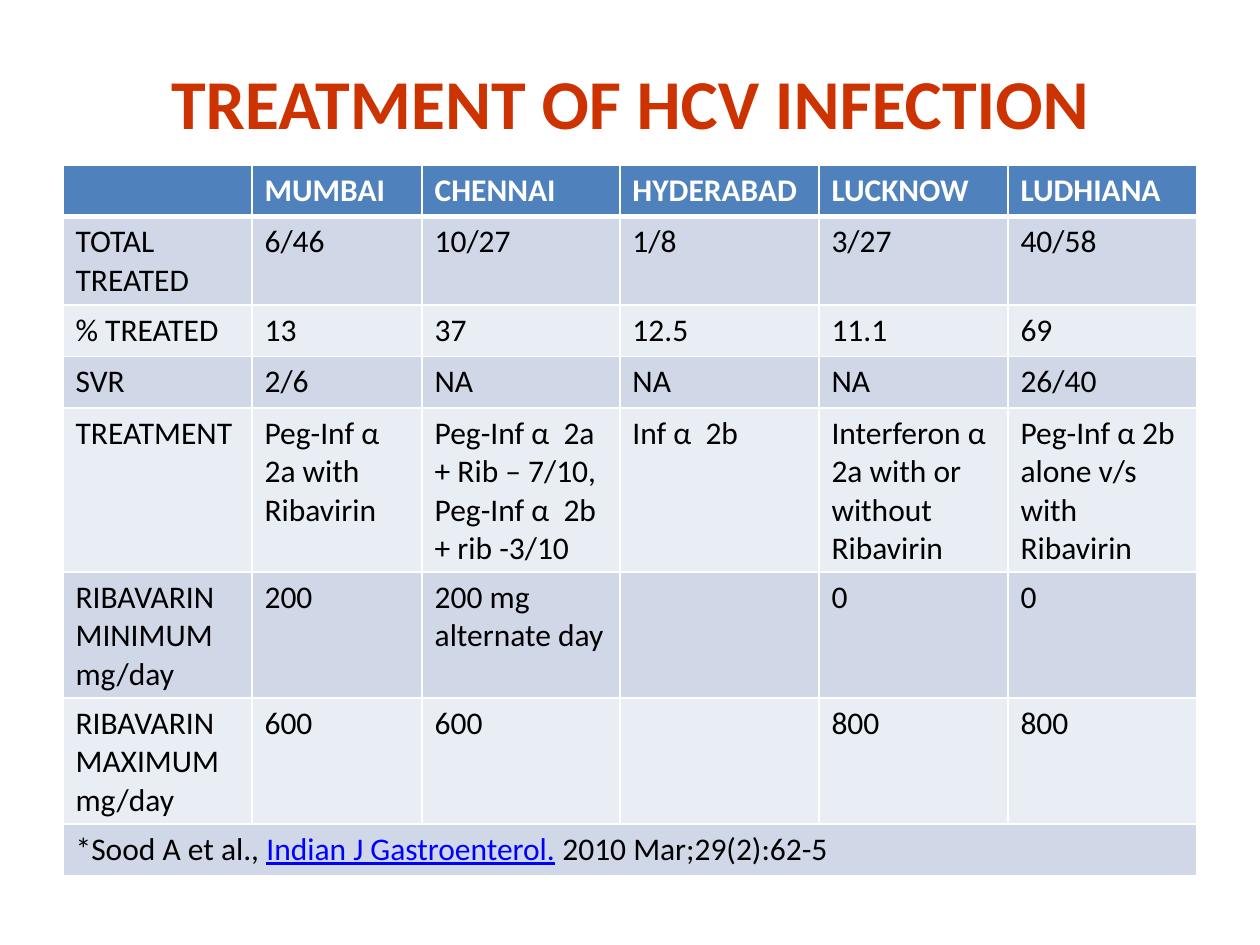
from lxml.etree import SubElement
from pptx import Presentation
from pptx.dml.color import RGBColor
from pptx.enum.text import MSO_ANCHOR, PP_ALIGN
from pptx.oxml.ns import qn
from pptx.util import Inches, Pt

WHITE = RGBColor(0xFF, 0xFF, 0xFF)
BLACK = RGBColor(0x00, 0x00, 0x00)
TITLE_RED = RGBColor(0xCC, 0x33, 0x00)
HEADER_BLUE = RGBColor(0x4F, 0x81, 0xBD)
BAND_DARK = RGBColor(0xD0, 0xD8, 0xE8)
BAND_LIGHT = RGBColor(0xE9, 0xED, 0xF4)
CITATION_BLUE = RGBColor(0x00, 0x00, 0xFF)

COLUMN_WIDTHS = [1.5, 1.35, 1.57, 1.58, 1.5, 1.5]
ROW_HEIGHT = 0.41
ROWS = [
    ["", "MUMBAI", "CHENNAI", "HYDERABAD", "LUCKNOW", "LUDHIANA"],
    ["TOTAL TREATED", "6/46", "10/27", "1/8", "3/27", "40/58"],
    ["% TREATED", "13", "37", "12.5", "11.1", "69"],
    ["SVR", "2/6", "NA", "NA", "NA", "26/40"],
    ["TREATMENT", "Peg-Inf α 2a with Ribavirin",
     "Peg-Inf α  2a + Rib – 7/10, Peg-Inf α  2b + rib -3/10", "Inf α  2b",
     "Interferon α 2a with or without Ribavirin",
     "Peg-Inf α 2b alone v/s with Ribavirin"],
    ["RIBAVARIN MINIMUM mg/day", "200", "200 mg alternate day", "", "0", "0"],
    ["RIBAVARIN MAXIMUM mg/day", "600", "600", "", "800", "800"],
    [""] * 6,
]
CITATION = ["*Sood A et al., ", "Indian J Gastroenterol.", "\u00a02010 Mar;29(2):62-5".replace("\u00a0", " ")]


class SlideBuilder:
    font_name = "Calibri"
    title_size = 40
    table_size = 18

    def __init__(self, slide):
        self.slide = slide

    def style_font(self, font, size, color, bold=False):
        font.name = self.font_name
        font.size = Pt(size)
        font.bold = bold
        font.color.rgb = color

    def add_title(self, text, left, top, width, height):
        box = self.slide.shapes.add_textbox(
            Inches(left), Inches(top), Inches(width), Inches(height))
        frame = box.text_frame
        frame.word_wrap = True
        frame.vertical_anchor = MSO_ANCHOR.MIDDLE
        paragraph = frame.paragraphs[0]
        paragraph.text = text
        paragraph.alignment = PP_ALIGN.CENTER
        self.style_font(paragraph.font, self.title_size, TITLE_RED, bold=True)

    def add_table(self, rows, column_widths, left, top, height):
        frame = self.slide.shapes.add_table(
            len(rows), len(column_widths), Inches(left), Inches(top),
            Inches(sum(column_widths)), Inches(height))
        table = frame.table
        for column, width in zip(table.columns, column_widths):
            column.width = Inches(width)
        for row_index, texts in enumerate(rows):
            table.rows[row_index].height = Inches(ROW_HEIGHT)
            for column_index, text in enumerate(texts):
                self.fill_cell(table.cell(row_index, column_index), text, row_index)
        frame.height = Inches(height)
        return table

    def fill_cell(self, cell, text, row_index):
        is_header = row_index == 0
        paragraph = cell.text_frame.paragraphs[0]
        paragraph.text = text
        self.style_font(paragraph.font, self.table_size,
                        WHITE if is_header else BLACK, bold=is_header)
        self.add_borders(cell, top=3 if row_index == 1 else 1,
                         bottom=3 if is_header else 1)
        cell.fill.solid()
        band = BAND_DARK if row_index % 2 else BAND_LIGHT
        cell.fill.fore_color.rgb = HEADER_BLUE if is_header else band

    def add_borders(self, cell, top, bottom):
        properties = cell._tc.get_or_add_tcPr()
        for side, points in (("L", 1), ("R", 1), ("T", top), ("B", bottom)):
            line = SubElement(properties, qn(f"a:ln{side}"), w=str(Pt(points)))
            fill = SubElement(line, qn("a:solidFill"))
            SubElement(fill, qn("a:srgbClr"), val=str(WHITE))

    def add_citation(self, table, parts):
        """Merge the last row and write the reference with its journal underlined."""
        last_row = len(table.rows) - 1
        cell = table.cell(last_row, 0)
        cell.merge(table.cell(last_row, len(table.columns) - 1))
        paragraph = cell.text_frame.paragraphs[0]
        for text in parts:
            paragraph.add_run().text = text
        journal = paragraph.runs[1].font
        journal.color.rgb = CITATION_BLUE
        journal.underline = True


def main():
    presentation = Presentation()
    presentation.slide_width = Inches(10)
    presentation.slide_height = Inches(7.5)
    builder = SlideBuilder(presentation.slides.add_slide(presentation.slide_layouts[6]))
    builder.add_title("TREATMENT OF HCV INFECTION", 0.5, 0.3, 9, 1.01)
    table = builder.add_table(ROWS, COLUMN_WIDTHS, 0.5, 1.31, 5.62)
    builder.add_citation(table, CITATION)
    presentation.save("out.pptx")


if __name__ == "__main__":
    main()
